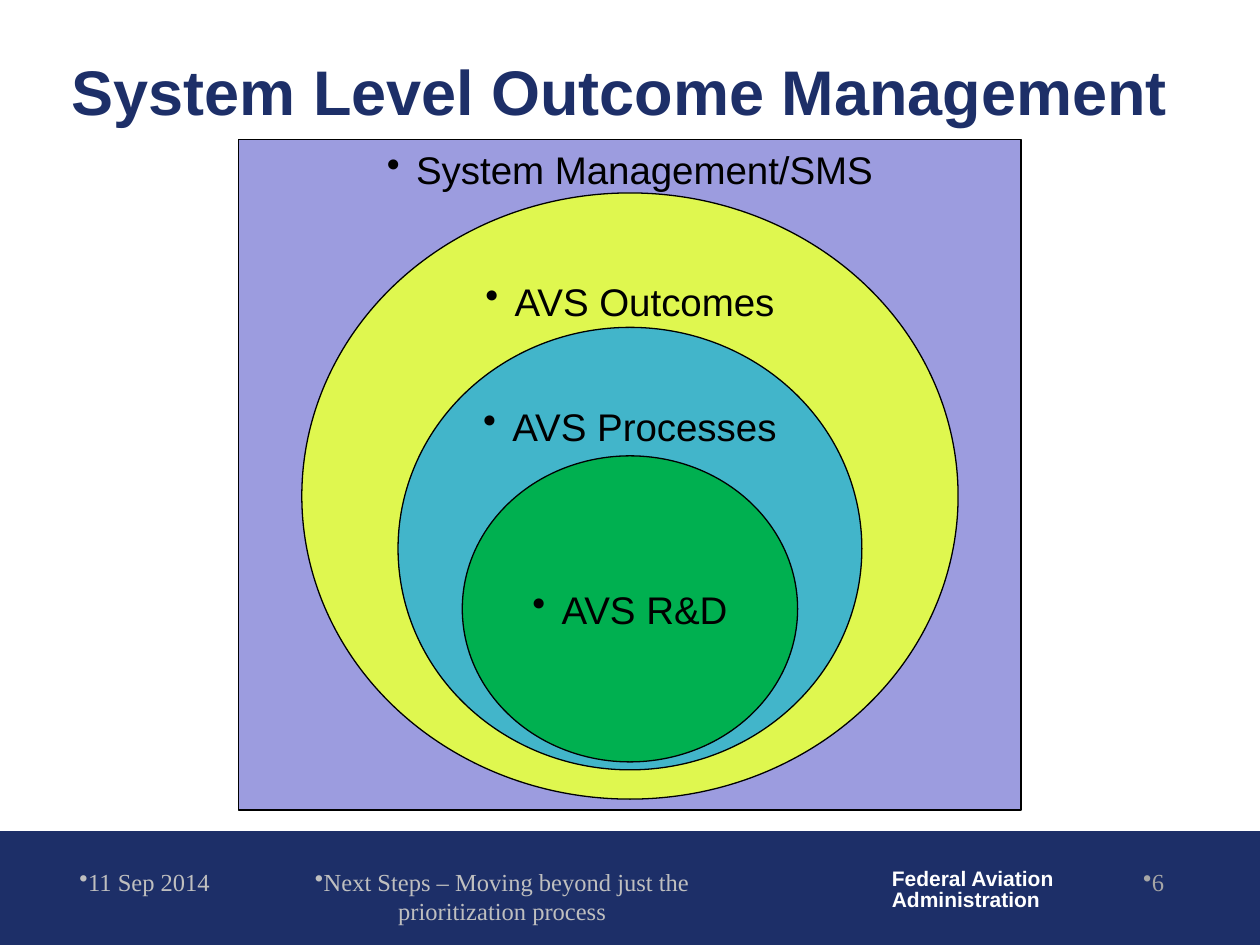
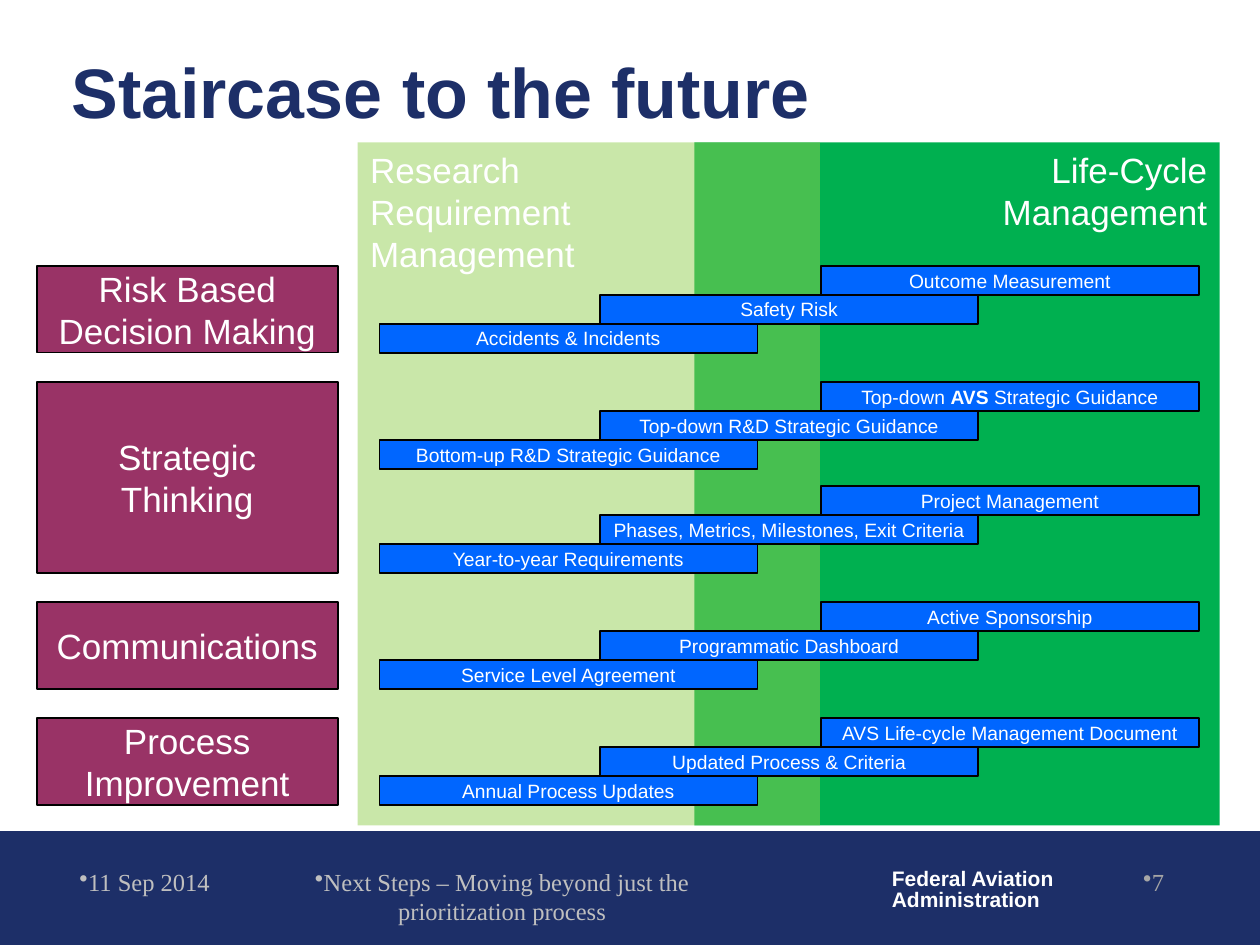
"""Build two slides on outcome management and the staircase to the future."""
from dataclasses import dataclass

from lxml import etree
from pptx import Presentation
from pptx import util as u
from pptx.dml.color import RGBColor
from pptx.enum import shapes, text
from pptx.oxml import ns

Cm = u.Cm
ALIGN = text.PP_ALIGN
ANCHOR = text.MSO_ANCHOR
RECTANGLE = shapes.MSO_SHAPE.RECTANGLE
OVAL = shapes.MSO_SHAPE.OVAL


@dataclass(frozen=True)
class Theme:
    """Colours, fonts and type sizes of the presentation."""
    navy: str = "1D2F68"
    white: str = "FFFFFF"
    black: str = "000000"
    silver: str = "BFBFBF"
    grey: str = "A6A6A6"
    lilac: str = "9C9CDF"
    yellow: str = "DFF74F"
    sky: str = "0099FF"
    green: str = "00B050"
    lime: str = "92D050"
    plum: str = "993366"
    blue: str = "0066FF"
    sans: str = "Arial"
    serif: str = "Times New Roman"
    title: float = 40
    long_title: float = 36
    ring: float = 22
    heading: float = 20
    footer: float = 14
    agency: float = 12
    bar: float = 11


THEME = Theme()


def apply(target, values):
    """Set each named attribute of the target."""
    for name, value in values.items():
        setattr(target, name, value)


def add_child(parent, tag, **attributes):
    """Append a DrawingML element to the parent."""
    return etree.SubElement(parent, ns.qn(tag), attributes)


class Deck:
    """Holds the style and the current slide and draws each kind of element."""

    def __init__(self, theme):
        self.theme = theme
        self.presentation = Presentation()
        apply(self.presentation, {"slide_width": Cm(25.4), "slide_height": Cm(19.05)})
        self.slide = None

    def new_slide(self, title, size, number):
        """Start a slide with its title, band and footers."""
        theme = self.theme
        self.slide = self.presentation.slides.add_slide(self.presentation.slide_layouts[5])
        placeholder = self.slide.shapes.title
        self.place(placeholder, 1.19, 0.97, 23.55, 1.7)
        self.set_text(placeholder, [title], size, theme.navy, bold=True, anchor=ANCHOR.MIDDLE)
        self.shape(RECTANGLE, (0, 16.76, 25.4, 2.29), theme.navy, line=theme.navy)
        agency = self.text_box((17.73, 17.4, 3.81, 1.12), ["Federal Aviation", "Administration"],
                               theme.agency, theme.white, bold=True, spacing=0.85)
        agency.text_frame.word_wrap = False
        footers = [
            ((1.35, 17.35, 4.65, 1.27), "11 Sep 2014", ALIGN.LEFT, theme.silver),
            ((6.1, 17.35, 8.05, 1.27), "Next Steps – Moving beyond just the prioritization process",
             ALIGN.CENTER, theme.silver),
            ((18.44, 17.35, 5.28, 1.27), str(number), ALIGN.RIGHT, theme.grey),
        ]
        for box, words, align, color in footers:
            self.text_box(box, [words], theme.footer, color, font=theme.serif, align=align, bullet=0)

    def place(self, shape, left, top, width, height):
        """Move and size a shape, in centimetres."""
        apply(shape, {"left": Cm(left), "top": Cm(top), "width": Cm(width), "height": Cm(height)})

    def text_box(self, box, lines, size, color, **style):
        """Add a text box."""
        shape = self.slide.shapes.add_textbox(*map(Cm, box))
        self.set_text(shape, lines, size, color, **style)
        return shape

    def shape(self, kind, box, fill, line=None, weight=0.75, opacity=None):
        """Add a filled preset shape with an optional outline."""
        shape = self.slide.shapes.add_shape(kind, *map(Cm, box))
        shape.shadow.inherit = False
        shape.fill.solid()
        shape.fill.fore_color.rgb = RGBColor.from_string(fill)
        if opacity:
            color = shape._element.spPr.find(".//" + ns.qn("a:srgbClr"))
            add_child(color, "a:alpha", val=str(opacity * 1000))
        if line:
            shape.line.color.rgb = RGBColor.from_string(line)
            shape.line.width = u.Pt(weight)
        else:
            shape.line.fill.background()
        return shape

    def set_text(self, shape, lines, size, color, font=None, bold=False, align=ALIGN.LEFT,
                 anchor=ANCHOR.TOP, spacing=None, bullet=None, insets=None):
        """Set one paragraph per line, with **bold** marks and an optional bullet indent."""
        frame = shape.text_frame
        apply(frame, {"word_wrap": True, "auto_size": text.MSO_AUTO_SIZE.NONE,
                      "vertical_anchor": anchor})
        apply(frame, insets or {})
        for index, line in enumerate(lines):
            paragraph = frame.add_paragraph() if index else frame.paragraphs[0]
            if bullet is not None:
                properties = paragraph._p.get_or_add_pPr()
                properties.set("marL", str(Cm(bullet)))
                properties.set("indent", str(-Cm(bullet)))
                add_child(properties, "a:buChar", char="•")
            apply(paragraph, {"alignment": align, "line_spacing": spacing})
            for position, words in enumerate(line.split("**")):
                run = paragraph.add_run()
                run.text = words
                apply(run.font, {"name": font or self.theme.sans, "size": u.Pt(size),
                                 "bold": bold or position % 2 == 1})
                run.font.color.rgb = RGBColor.from_string(color)

    def ring(self, kind, top, width, height, fill, label, opacity=None, **style):
        """Add one of the nested areas, centred on the slide."""
        shape = self.shape(kind, (12.7 - width / 2, top, width, height), fill,
                           self.theme.black, opacity=opacity)
        self.set_text(shape, [label], self.theme.ring, self.theme.black,
                      align=ALIGN.CENTER, bullet=0.59, **style)

    def panel(self, box, fill, lines, align, opacity=None):
        """Add a tall background panel with its heading."""
        shape = self.shape(RECTANGLE, box, fill, opacity=opacity)
        self.set_text(shape, lines, self.theme.heading, self.theme.white, align=align)

    def block(self, box, fill, label, size):
        """Add an outlined block with a centred label."""
        shape = self.shape(RECTANGLE, box, fill, self.theme.black, weight=1)
        self.set_text(shape, [label], size, self.theme.white,
                      align=ALIGN.CENTER, anchor=ANCHOR.MIDDLE)


def outcome_slide(deck):
    """Draw the nested levels of outcome management."""
    theme = deck.theme
    deck.new_slide("System Level Outcome Management", theme.long_title, 6)
    deck.ring(RECTANGLE, 2.82, 15.77, 13.51, theme.lilac, "System Management/SMS")
    deck.ring(OVAL, 3.89, 13.23, 12.22, theme.yellow, "AVS Outcomes", anchor=ANCHOR.MIDDLE,
              insets={"margin_top": 0, "margin_bottom": Cm(7.87)})
    deck.ring(OVAL, 6.6, 9.35, 8.92, theme.sky, "AVS Processes", opacity=70,
              anchor=ANCHOR.MIDDLE, insets={"margin_bottom": Cm(5.08)})
    deck.ring(OVAL, 9.19, 6.76, 6.17, theme.green, "AVS R&D", anchor=ANCHOR.MIDDLE)


def staircase_slide(deck):
    """Draw the themes and the staircase of steps beside each."""
    theme = deck.theme
    deck.new_slide("Staircase to the future", theme.title, 7)
    deck.panel((14, 2.87, 10.59, 13.77), theme.green, ["Life-Cycle", "Management"], ALIGN.RIGHT)
    deck.panel((7.21, 2.87, 9.32, 13.77), theme.lime,
               ["Research", "Requirement", "Management"], ALIGN.LEFT, opacity=49)
    themes = {
        "Risk Based Decision Making": [
            ("Accidents & Incidents", "Safety Risk", "Outcome Measurement")],
        "Strategic Thinking": [
            ("Bottom-up R&D Strategic Guidance", "Top-down R&D Strategic Guidance",
             "Top-down **AVS** Strategic Guidance"),
            ("Year-to-year Requirements", "Phases, Metrics, Milestones, Exit Criteria",
             "Project Management")],
        "Communications": [
            ("Service Level Agreement", "Programmatic Dashboard", "Active Sponsorship")],
        "Process Improvement": [
            ("Annual Process Updates", "Updated Process & Criteria",
             "AVS Life-cycle Management Document")],
    }
    stair_height, stair_gap, theme_gap = 1.75, 0.35, 0.59
    step_height = stair_height / 3
    top = 5.36
    for label, staircases in themes.items():
        count = len(staircases)
        height = count * stair_height + (count - 1) * stair_gap
        deck.block((0.74, top, 6.07, height), theme.plum, label, theme.heading)
        for row, steps in enumerate(staircases):
            stair_top = top + row * (stair_height + stair_gap)
            for column, step in enumerate(steps):
                box = (7.65 + 4.45 * column, stair_top + (2 - column) * step_height,
                       7.62, step_height)
                deck.block(box, theme.blue, step, theme.bar)
        top += height + theme_gap


def main():
    """Build and save the presentation."""
    deck = Deck(THEME)
    outcome_slide(deck)
    staircase_slide(deck)
    deck.presentation.save("out.pptx")


if __name__ == "__main__":
    main()
